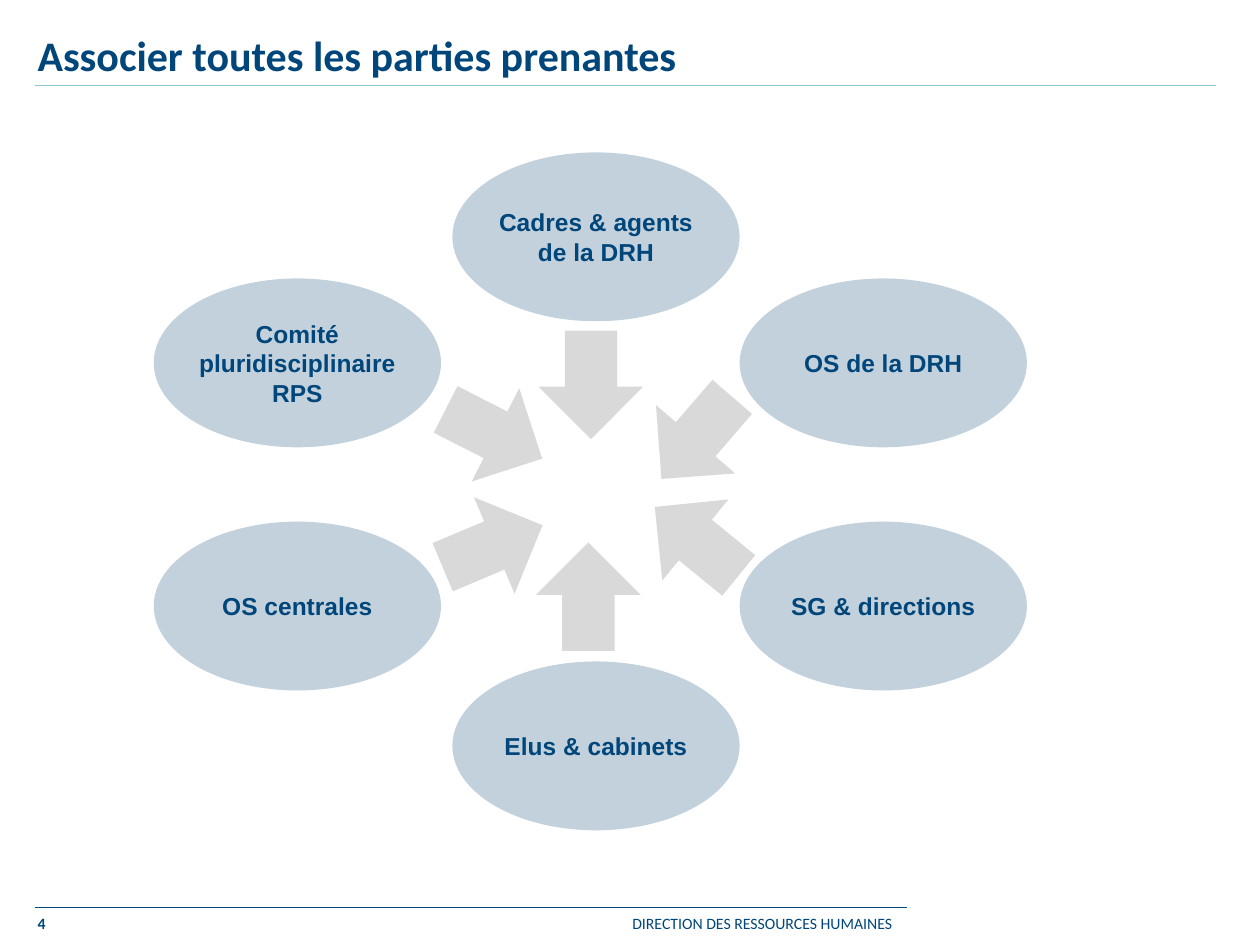
"""Build the slide on involving every stakeholder."""
import lxml.etree
import pptx
import pptx.dml.color
import pptx.enum.shapes
import pptx.enum.text
import pptx.oxml.ns
import pptx.util

HUES = {"navy": "00467A", "teal": "8AC6CD", "pale": "C2D1DC", "grey": "D9D9D9"}
KIND = pptx.enum.shapes.MSO_SHAPE
ALIGN = pptx.enum.text.PP_ALIGN
MID = pptx.enum.text.MSO_ANCHOR.MIDDLE

deck = pptx.Presentation()
deck.slide_width = pptx.util.Inches(10)
deck.slide_height = pptx.util.Inches(7.5)
col, row = deck.slide_width / 100, deck.slide_height / 100
slide = deck.slides.add_slide(deck.slide_layouts[6])


def place(left, top, wide, high):
    return [round(n) for n in (left * col, top * row, wide * col, high * row)]


def write(shape, words, size, face, bold, align):
    frame = shape.text_frame
    frame.word_wrap = True
    para = frame.paragraphs[0]
    para.text = words
    para.alignment = align
    for run in para.runs:
        run.font.size = pptx.util.Pt(size)
        run.font.name = face
        run.font.bold = bold
        run.font.color.rgb = pptx.dml.color.RGBColor.from_string(HUES["navy"])


for right, top, hue in [(96.5, 9.07, "teal"), (72, 96, "navy")]:
    rule = slide.shapes.add_connector(
        pptx.enum.shapes.MSO_CONNECTOR.STRAIGHT, *place(2.8, top, right, top))
    rule.line.color.rgb = pptx.dml.color.RGBColor.from_string(HUES[hue])
    rule.line.width = pptx.util.Pt(0.75)
    lxml.etree.SubElement(rule._element.spPr, pptx.oxml.ns.qn("a:effectLst"))

labels = [
    ("DIRECTION DES RESSOURCES HUMAINES", (49.2, 96, 27.6, 3.33), 9, False),
    ("4", (2, 96, 9.8, 3.2), 9, True),
    ("Associer toutes les parties prenantes", (2, 3.87, 94.5, 3.73), 24, True),
]
for words, spot, size, bold in labels:
    box = slide.shapes.add_textbox(*place(*spot))
    write(box, words, size, "Calibri", bold, ALIGN.LEFT)
box.text_frame.vertical_anchor = MID

cols = [12.2, 35.9, 58.7]
rows = [16.13, 29.47, 55.2, 70]
groups = [
    ("OS centrales", 0, 2),
    ("Comité pluridisciplinaire RPS", 0, 1),
    ("Cadres & agents\nde la DRH", 1, 0),
    ("Elus & cabinets", 1, 3),
    ("OS de la DRH", 2, 1),
    ("SG & directions", 2, 2),
]
arrows = [
    (34.8, 52.27, 337.2),
    (34.9, 40.4, 27),
    (42.6, 35.2, 90),
    (42.4, 57.6, 270),
    (51, 40.8, 130.8),
    (51, 51.73, 219.2),
]
items = [(KIND.OVAL, (cols[x], rows[y], 22.8, 17.87), 0, "pale", words)
         for words, x, y in groups]
items += [(KIND.RIGHT_ARROW, (left, top, 8.6, 11.07), turn, "grey", "")
          for left, top, turn in arrows]
for kind, spot, turn, hue, words in items:
    shape = slide.shapes.add_shape(kind, *place(*spot))
    shape.shadow.inherit = False
    shape.rotation = turn
    shape.fill.solid()
    shape.fill.fore_color.rgb = pptx.dml.color.RGBColor.from_string(HUES[hue])
    shape.line.fill.background()
    if words:
        frame = shape.text_frame
        frame.margin_left = frame.margin_right = 0
        frame.margin_top = frame.margin_bottom = 0
        frame.vertical_anchor = MID
        write(shape, words, 14, "Arial", True, ALIGN.CENTER)

deck.save("out.pptx")
